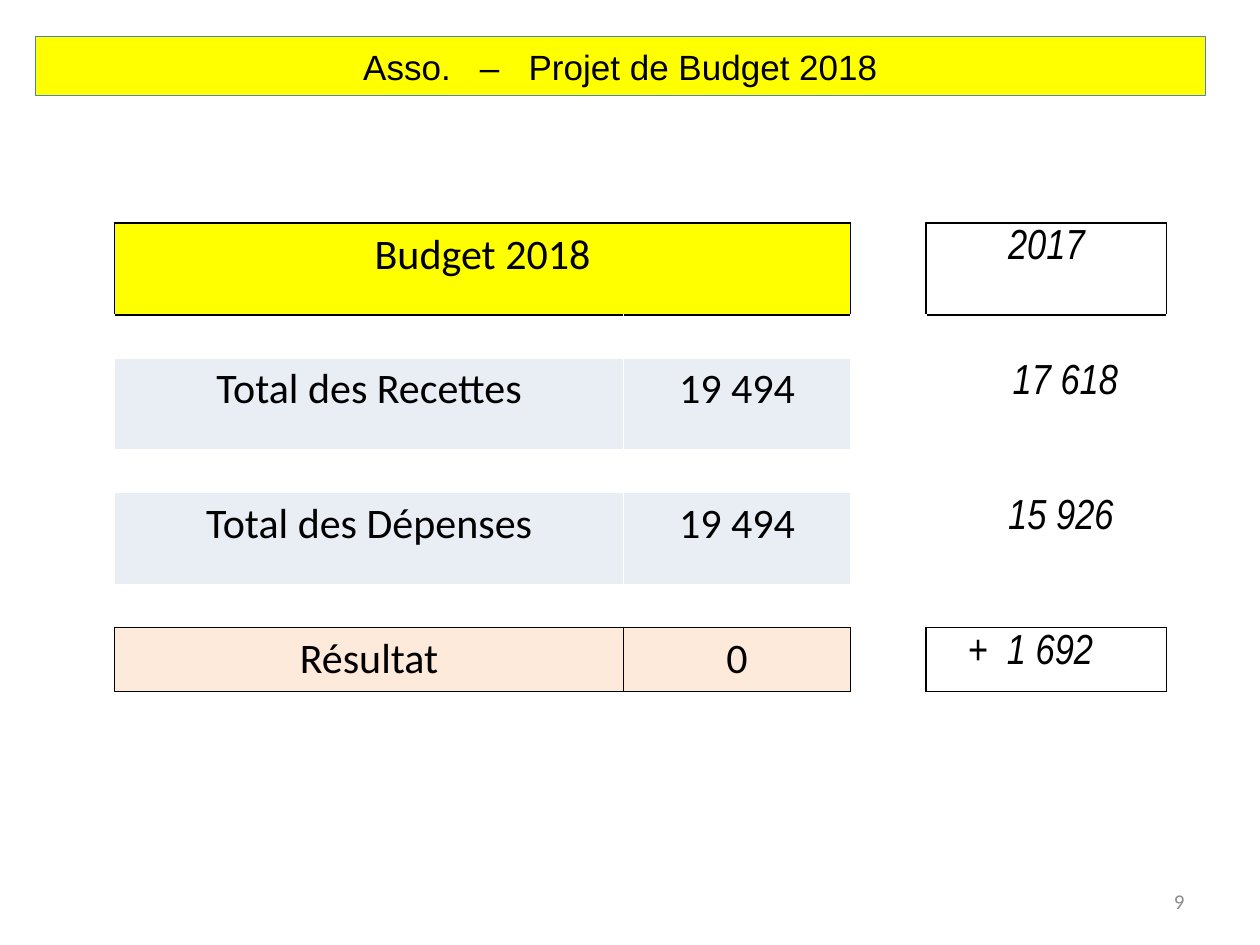
import lxml.etree
import pptx
import pptx.dml.color
import pptx.enum.shapes
import pptx.enum.text
import pptx.oxml.ns
import pptx.util

Inches, Pt = pptx.util.Inches, pptx.util.Pt
ALIGN = pptx.enum.text.PP_ALIGN
ANCHOR = pptx.enum.text.MSO_ANCHOR

TITLE = "Asso.   –   Projet de Budget 2018"
PAGE = "9"
ROWS = [
    ("Budget 2018", "", "2017"),
    ("Total des Recettes", "19 494", "17 618"),
    ("Total des Dépenses", "19 494", "15 926"),
    ("Résultat", "0", "+  1 692"),
]
THEME = {
    "yellow": "FFFF00", "band": "E9EDF4", "result": "FDEADA",
    "black": "000000", "white": "FFFFFF", "outline": "4F81BD", "grey": "8C8C8C",
    "body": "Calibri", "past": "Arial Narrow", "heading": "Arial",
    "table_size": 24, "title_size": 20, "page_size": 12, "gap_size": 12,
}
ROW_FILLS = ["yellow", "band", "band", "result"]
PAST_INDENTS = [0, 0.3, 0.23, 0.33]
COL_WIDTHS = [4.04, 1.8, 0.6, 1.91]
ROW_HEIGHTS = [0.73, 0.34, 0.73, 0.34, 0.73, 0.34, 0.49]
SPACER = 2
PAST = 3
LAST = len(ROW_HEIGHTS) - 1


def rgb(name):
    return pptx.dml.color.RGBColor.from_string(THEME[name])


def write(tf, text, size="table_size", font="body", color="black",
          align=ALIGN.CENTER, italic=False):
    p = tf.paragraphs[0]
    p.alignment = align
    r = p.add_run()
    r.text = text
    r.font.size = Pt(THEME[size])
    r.font.name = THEME[font]
    r.font.italic = italic
    r.font.color.rgb = rgb(color)


def boxed(row, col):
    return row in (0, LAST) and col in (0, 1, PAST)


def set_borders(cell, row, col):
    neighbours = {"lnL": (row, col - 1), "lnR": (row, col + 1),
                  "lnT": (row - 1, col), "lnB": (row + 1, col)}
    tc_pr = cell._tc.get_or_add_tcPr()
    qn = pptx.oxml.ns.qn
    for tag, other in neighbours.items():
        color = "black" if boxed(row, col) or boxed(*other) else "white"
        ln = lxml.etree.SubElement(tc_pr, qn("a:" + tag), w=str(Pt(1)))
        fill = lxml.etree.SubElement(ln, qn("a:solidFill"))
        lxml.etree.SubElement(fill, qn("a:srgbClr"), val=THEME[color])


def add_title(s):
    sp = s.shapes.add_shape(pptx.enum.shapes.MSO_SHAPE.RECTANGLE,
                            Inches(0.28), Inches(0.29), Inches(9.29), Inches(0.47))
    sp.shadow.inherit = False
    sp.fill.solid()
    sp.fill.fore_color.rgb = rgb("yellow")
    sp.line.color.rgb = rgb("outline")
    sp.line.width = Pt(0.75)
    sp.text_frame.vertical_anchor = ANCHOR.MIDDLE
    write(sp.text_frame, TITLE, size="title_size", font="heading")


def add_budget(s):
    table = s.shapes.add_table(
        len(ROW_HEIGHTS), len(COL_WIDTHS), Inches(0.91), Inches(1.77),
        Inches(sum(COL_WIDTHS)), Inches(sum(ROW_HEIGHTS))).table
    table.first_row = table.horz_banding = False
    for column, width in zip(table.columns, COL_WIDTHS):
        column.width = Inches(width)
    for row, height in enumerate(ROW_HEIGHTS):
        table.rows[row].height = Inches(height)
        for col in range(len(COL_WIDTHS)):
            cell = table.cell(row, col)
            set_borders(cell, row, col)
            index, is_gap = divmod(row, 2)
            if is_gap or col >= SPACER:
                cell.fill.background()
            else:
                cell.fill.solid()
                cell.fill.fore_color.rgb = rgb(ROW_FILLS[index])
            label, amount, past = ROWS[index]
            text = "" if is_gap else (label, amount, "", past)[col]
            if not text:
                end = cell.text_frame.paragraphs[0]._p.get_or_add_endParaRPr()
                end.set("sz", str(THEME["gap_size"] * 100))
            elif col == PAST:
                cell.margin_left = Inches(PAST_INDENTS[index])
                cell.margin_right = 0
                align = ALIGN.LEFT if row == LAST else ALIGN.CENTER
                write(cell.text_frame, text, font="past", align=align, italic=True)
            else:
                write(cell.text_frame, text)
    table.cell(0, 0).merge(table.cell(0, 1))


def add_page_number(s):
    sp = s.shapes.add_textbox(Inches(7.17), Inches(6.95), Inches(2.33), Inches(0.4))
    tf = sp.text_frame
    tf.word_wrap = True
    tf.vertical_anchor = ANCHOR.MIDDLE
    write(tf, PAGE, size="page_size", color="grey", align=ALIGN.RIGHT)


def main():
    prs = pptx.Presentation()
    prs.slide_width, prs.slide_height = Inches(10), Inches(7.5)
    s = prs.slides.add_slide(prs.slide_layouts[6])
    add_budget(s)
    add_title(s)
    add_page_number(s)
    prs.save("out.pptx")


if __name__ == "__main__":
    main()
